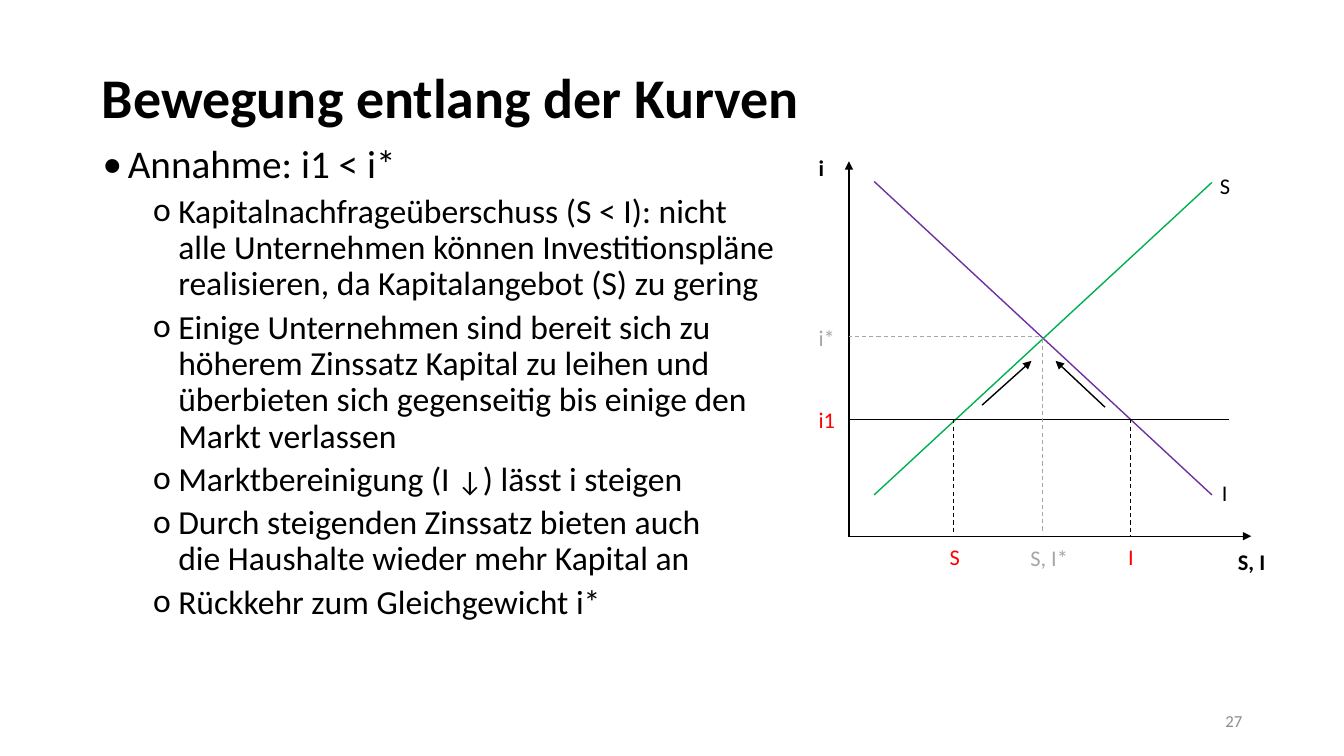
import pptx
import pptx.dml.color
import pptx.enum.dml
import pptx.enum.shapes
import pptx.enum.text
import pptx.util
from lxml import etree
from pptx.oxml.ns import qn

Inches = pptx.util.Inches
Pt = pptx.util.Pt
Align = pptx.enum.text.PP_ALIGN
Anchor = pptx.enum.text.MSO_ANCHOR

BLACK, GREY, RED = "000000", "A6A6A6", "FF0000"
PURPLE, GREEN, NUMBER_GREY = "7030A0", "00B050", "8C8C8C"

POINTS = [
    [("Kapitalnachfrageüberschuss (S < I): nicht\valle Unternehmen können "
      "Investitionspläne\vrealisieren, da Kapitalangebot (S) zu gering", 24)],
    [("Einige Unternehmen sind bereit sich zu\vhöherem Zinssatz Kapital zu leihen und\v"
      "überbieten sich gegenseitig bis einige den\vMarkt verlassen", 24)],
    [("Marktbereinigung (I ", 24), ("↓", 20), (") lässt i steigen", 24)],
    [("Durch steigenden Zinssatz bieten auch\vdie Haushalte wieder mehr Kapital an", 24)],
    [("Rückkehr zum Gleichgewicht i*", 24)],
]


def color(value):
    return pptx.dml.color.RGBColor.from_string(value)


def add_text(para, text, size=16, fill=BLACK, bold=False, font="Calibri"):
    """Append text to a paragraph; a vertical tab starts a new line."""
    for index, line in enumerate(text.split("\v")):
        if index:
            para.add_line_break()
        span = para.add_run()
        span.text = line
        span.font.name = font
        span.font.size = Pt(size)
        span.font.bold = bold
        span.font.color.rgb = color(fill)


class SlideBuilder:
    def __init__(self, deck):
        self.slide = deck.slides.add_slide(deck.slide_layouts[5])

    def title(self, text, left, top, width, height):
        box = self.slide.shapes.title
        box.left, box.top = Inches(left), Inches(top)
        box.width, box.height = Inches(width), Inches(height)
        box.text_frame.vertical_anchor = Anchor.MIDDLE
        para = box.text_frame.paragraphs[0]
        para.alignment = Align.LEFT
        para.line_spacing = 0.9
        add_text(para, text, size=40, bold=True)

    def box(self, left, top, width, height, wrap=True):
        shape = self.slide.shapes.add_textbox(
            Inches(left), Inches(top), Inches(width), Inches(height))
        shape.text_frame.word_wrap = wrap
        return shape.text_frame

    def label(self, text, left, top, width=0.63, height=0.37, wrap=True,
              align=Align.LEFT, anchor=Anchor.TOP, **style):
        frame = self.box(left, top, width, height, wrap)
        frame.vertical_anchor = anchor
        para = frame.paragraphs[0]
        para.alignment = align
        add_text(para, text, **style)

    def bullet(self, para, spans, mark, level=0, before=0):
        para.level = level
        para.line_spacing = 0.9
        para.space_before = Pt(before)
        properties = para._p.get_or_add_pPr()
        properties.set("marL", str(Inches(0.25 + 0.5 * level)))
        properties.set("indent", str(Inches(-0.25)))
        etree.SubElement(properties, qn("a:buFont")).set("typeface", "Calibri")
        etree.SubElement(properties, qn("a:buChar")).set("char", mark)
        for text, size in spans:
            add_text(para, text, size=size)

    def line(self, start, end, fill=BLACK, width=1, dashed=False, arrow=False):
        connector = self.slide.shapes.add_connector(
            pptx.enum.shapes.MSO_CONNECTOR.STRAIGHT,
            *[Inches(value) for value in (*start, *end)])
        connector.line.color.rgb = color(fill)
        connector.line.width = Pt(width)
        if dashed:
            connector.line.dash_style = pptx.enum.dml.MSO_LINE.DASH
        if arrow:
            outline = connector.line._get_or_add_ln()
            etree.SubElement(outline, qn("a:tailEnd")).set("type", "triangle")
        etree.SubElement(connector._element.spPr, qn("a:effectLst"))


def add_argument(page):
    frame = page.box(0.92, 1.39, 11.5, 5.36)
    page.bullet(frame.paragraphs[0], [("Annahme: i1 < i*", 28)], "•")
    for spans in POINTS:
        page.bullet(frame.add_paragraph(), spans, "o", level=1, before=5)


def add_diagram(page):
    page.line((8.42, 5.32), (8.42, 1.6), arrow=True)
    page.line((8.41, 5.32), (12.41, 5.32), arrow=True)
    page.line((8.67, 1.8), (12.02, 4.91), PURPLE)
    page.line((8.67, 4.91), (12.02, 1.81), GREEN)
    page.line((8.43, 4.16), (12.19, 4.16), width=0.75)

    for start, end, fill in [
        ((10.31, 3.34), (8.42, 3.34), GREY),
        ((10.34, 3.36), (10.34, 5.29), GREY),
        ((9.46, 4.16), (9.46, 5.29), BLACK),
        ((11.21, 4.16), (11.21, 5.32), BLACK),
    ]:
        page.line(start, end, fill, width=0.75, dashed=True)

    page.line((9.74, 4.02), (10.23, 3.58), arrow=True)
    page.line((10.96, 4.04), (10.47, 3.58), arrow=True)

    page.label("i", 8.02, 1.48, width=0.4, bold=True)
    page.label("S, I", 12.18, 5.39, bold=True)
    page.label("S", 12, 1.66)
    page.label("I", 12.02, 4.7)
    page.label("S", 9.32, 5.34, fill=RED)
    page.label("I", 11.09, 5.34, fill=RED)
    page.label("i1", 8.02, 3.98, width=0.77, fill=RED)
    page.label("i*", 8.02, 3.17, width=0.77, fill=GREY)
    page.label("S, I*", 10.12, 5.35, width=0.58, wrap=False, fill=GREY)


def main():
    deck = pptx.Presentation()
    deck.slide_width, deck.slide_height = Inches(13.33), Inches(7.5)
    page = SlideBuilder(deck)
    page.title("Bewegung entlang der Kurven", 0.91, 0.21, 11.5, 1.57)
    add_argument(page)
    page.label("27", 9.42, 6.95, width=3, height=0.4, align=Align.RIGHT,
               anchor=Anchor.MIDDLE, size=12, fill=NUMBER_GREY)
    add_diagram(page)
    deck.save("out.pptx")


if __name__ == "__main__":
    main()
